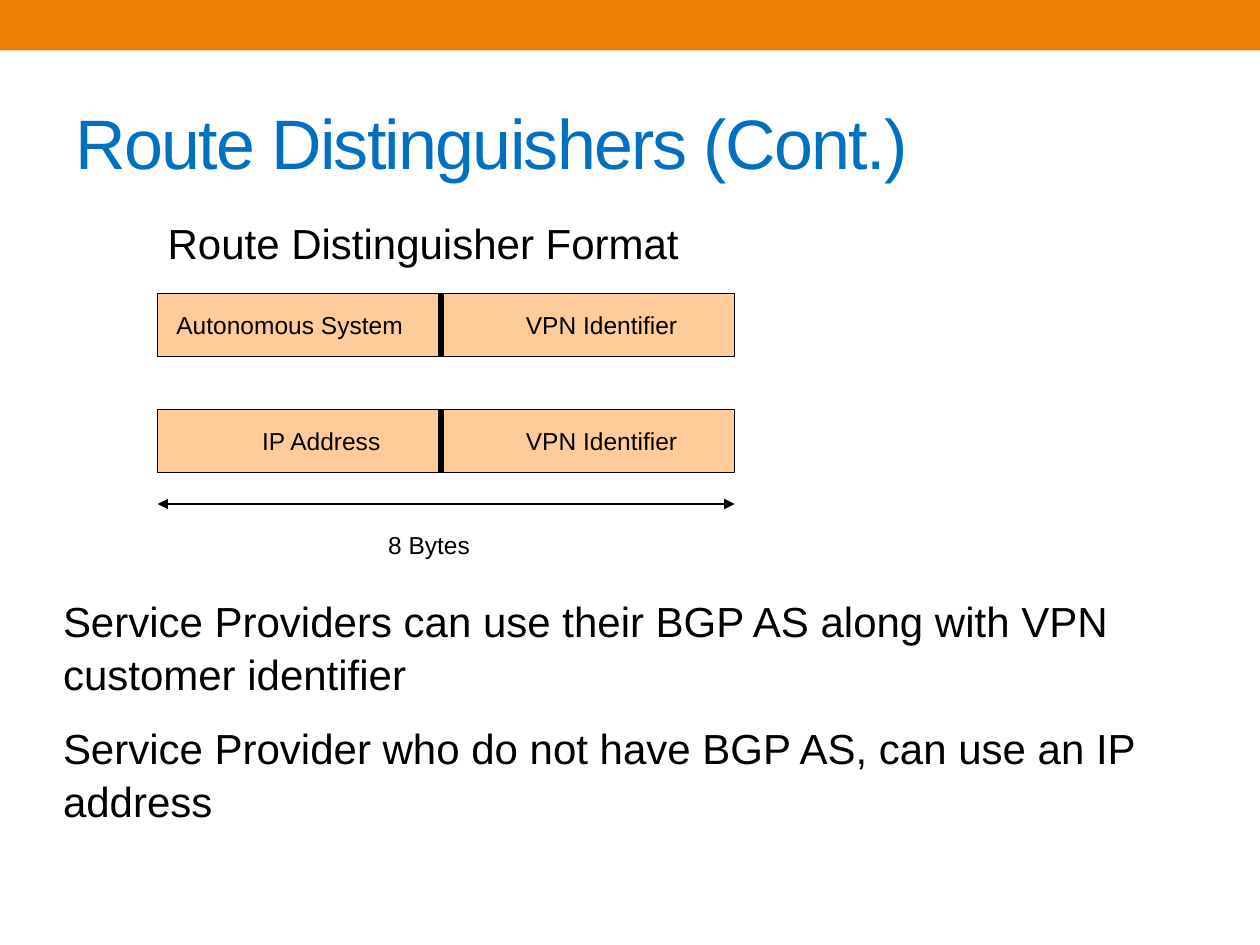
from lxml import etree
from pptx import Presentation
from pptx.dml.color import RGBColor
from pptx.enum.shapes import MSO_CONNECTOR, MSO_SHAPE
from pptx.enum.text import MSO_ANCHOR, MSO_AUTO_SIZE, PP_ALIGN
from pptx.oxml.ns import qn
from pptx.util import Inches, Pt

RECTANGLE = MSO_SHAPE.RECTANGLE
STRAIGHT = MSO_CONNECTOR.STRAIGHT
MIDDLE = MSO_ANCHOR.MIDDLE
GROW = MSO_AUTO_SIZE.SHAPE_TO_FIT_TEXT
LEFT, CENTER = PP_ALIGN.LEFT, PP_ALIGN.CENTER

FONT = "Arial"
COLORS = {"banner": "F07F09", "title": "0070C0", "field": "FFCC99", "ink": "000000"}
TITLE_SIZE, BODY_SIZE, LABEL_SIZE = 40, 24, 14

FORMAT_LEFT, FORMAT_RIGHT, DIVIDER_X = 1.25, 5.83, 3.5
FIELD_HEIGHT = 0.5
LABEL_WIDTH, LABEL_HEIGHT = 2.5, 0.31

# Row top, then (text, label left, extra left inset) for each field
FORMAT_ROWS = [
    (2.33, [("Autonomous System", 1, 0.1), ("VPN Identifier", DIVIDER_X, 0.05)]),
    (3.25, [("IP Address", 1.25, 0.1), ("VPN Identifier", DIVIDER_X, 0.05)]),
]
NOTES = [
    "Service Providers can use their BGP AS along with VPN customer identifier",
    "Service Provider who do not have BGP AS, can use an IP address",
]


class SlideBuilder:
    """Holds the current slide and draws elements in the deck's style."""

    def __init__(self, slide):
        self.slide = slide

    def color(self, name):
        return RGBColor.from_string(COLORS[name])

    def style_font(self, font, size, color="ink"):
        font.name = FONT
        font.size = Pt(size)
        font.color.rgb = self.color(color)

    def title(self, text, left, top, width, height):
        shape = self.slide.shapes.title
        shape.left, shape.top = Inches(left), Inches(top)
        shape.width, shape.height = Inches(width), Inches(height)
        shape.text_frame.text = text
        shape.text_frame.vertical_anchor = MIDDLE
        paragraph = shape.text_frame.paragraphs[0]
        paragraph.alignment = LEFT
        self.style_font(paragraph.font, TITLE_SIZE, "title")
        # Tighten the letter spacing by one point
        paragraph.runs[0].font._element.set("spc", "-100")

    def rectangle(self, left, top, width, height, fill, outlined=True):
        shape = self.slide.shapes.add_shape(
            RECTANGLE, Inches(left), Inches(top), Inches(width), Inches(height))
        shape.shadow.inherit = False
        shape.fill.solid()
        shape.fill.fore_color.rgb = self.color(fill)
        if outlined:
            shape.line.color.rgb = self.color("ink")
            shape.line.width = Pt(0.75)
        else:
            shape.line.fill.background()

    def line(self, start_x, start_y, end_x, end_y, width, arrows=False):
        connector = self.slide.shapes.add_connector(
            STRAIGHT, Inches(start_x), Inches(start_y), Inches(end_x), Inches(end_y))
        connector.line.color.rgb = self.color("ink")
        connector.line.width = Pt(width)
        properties = connector._element.spPr
        etree.SubElement(properties, qn("a:effectLst"))
        if arrows:
            outline = properties.find(qn("a:ln"))
            for end in ("a:headEnd", "a:tailEnd"):
                etree.SubElement(outline, qn(end), type="triangle")

    def text(self, texts, left, top, width, height, size,
             alignment=LEFT, lead=0, line_spacing=1.0, wrap=True):
        shape = self.slide.shapes.add_textbox(
            Inches(left), Inches(top), Inches(width), Inches(height))
        frame = shape.text_frame
        frame.word_wrap = wrap
        frame.auto_size = GROW
        frame.margin_left, frame.margin_right = Inches(0.08 + lead), Inches(0.08)
        frame.margin_top = frame.margin_bottom = Inches(0.04)
        frame.text = "\n".join(texts)
        for index, paragraph in enumerate(frame.paragraphs):
            paragraph.alignment = alignment
            paragraph.line_spacing = line_spacing
            paragraph.space_before = Pt(size / 2 if index else 0)
            self.style_font(paragraph.font, size)

    def format_row(self, top, fields):
        """Draw one two-field layout of the route distinguisher."""
        self.rectangle(FORMAT_LEFT, top, FORMAT_RIGHT - FORMAT_LEFT, FIELD_HEIGHT, "field")
        self.line(DIVIDER_X, top, DIVIDER_X, top + FIELD_HEIGHT, 3)
        for label, left, lead in fields:
            self.text([label], left, top + 0.09, LABEL_WIDTH, LABEL_HEIGHT,
                      LABEL_SIZE, CENTER, lead)


def main():
    presentation = Presentation()
    presentation.slide_width, presentation.slide_height = Inches(10), Inches(7.5)
    title_only = presentation.slide_layouts.get_by_name("Title Only")
    builder = SlideBuilder(presentation.slides.add_slide(title_only))

    builder.rectangle(0, 0, 10, 0.4, "banner", outlined=False)
    builder.title("Route Distinguishers (Cont.)", 0.5, 0.58, 9, 1.08)
    builder.text(["Route Distinguisher Format"], 1.25, 1.67, 6.08, 0.48,
                 BODY_SIZE, line_spacing=1.05)
    for top, fields in FORMAT_ROWS:
        builder.format_row(top, fields)
    builder.line(FORMAT_LEFT, 4, FORMAT_RIGHT, 4, 0.75, arrows=True)
    builder.text(["8 Bytes"], 3, 4.17, 0.85, LABEL_HEIGHT, LABEL_SIZE, wrap=False)
    builder.text(NOTES, 0.42, 4.67, 8.92, 1.88, BODY_SIZE, line_spacing=1.05)

    presentation.save("out.pptx")


if __name__ == "__main__":
    main()
